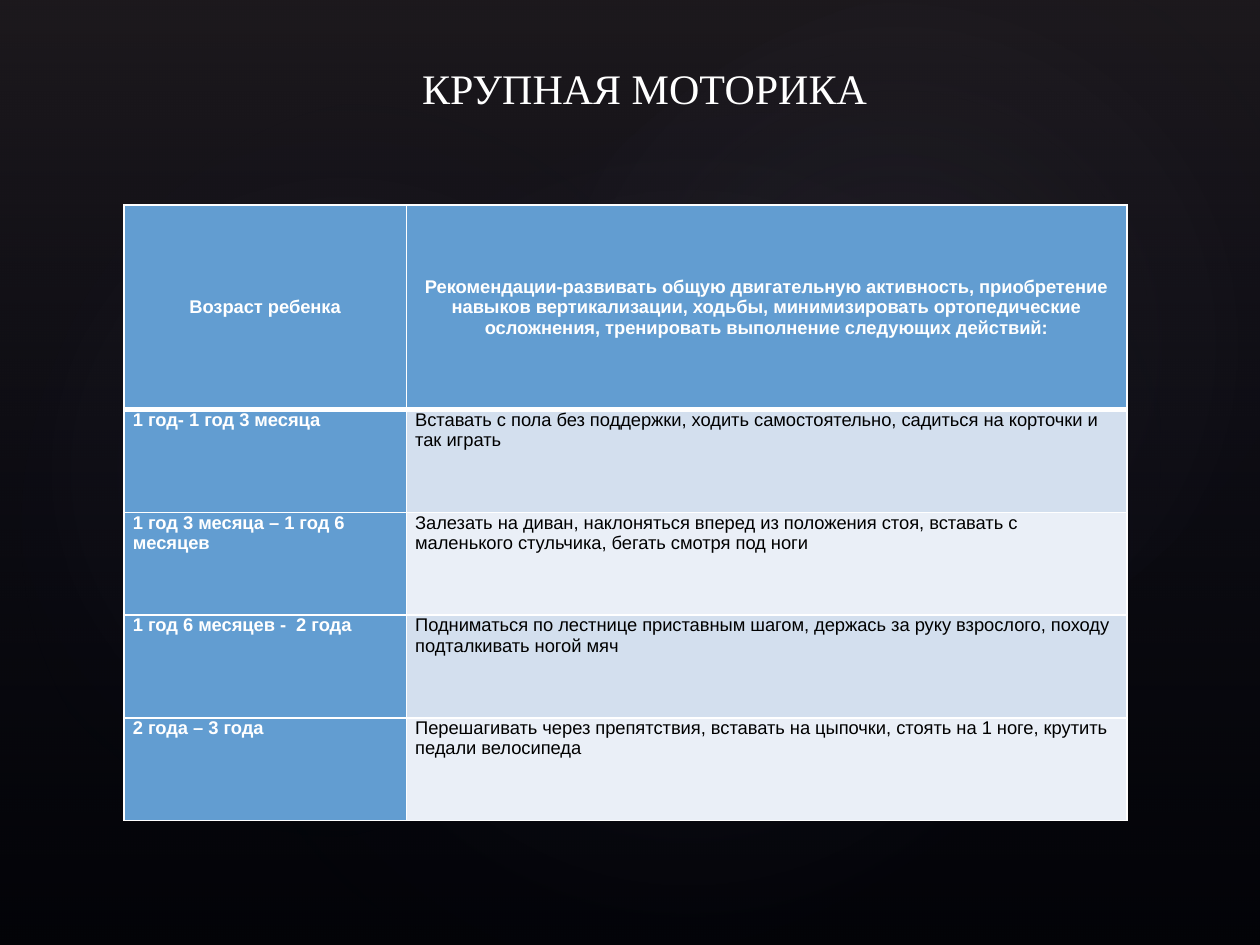
from lxml import etree
from pptx import Presentation
from pptx.dml.color import RGBColor
from pptx.enum.shapes import MSO_SHAPE as Shape
from pptx.enum.text import MSO_ANCHOR as Anchor, PP_ALIGN as Align
from pptx.oxml import parse_xml
from pptx.oxml.ns import nsdecls, qn
from pptx.util import Cm, Pt

BLACK = RGBColor(0x00, 0x00, 0x00)
WHITE = RGBColor(0xFF, 0xFF, 0xFF)
BLUE = RGBColor(0x62, 0x9D, 0xD1)
BANDS = [RGBColor(0xD3, 0xDF, 0xEE), RGBColor(0xEA, 0xEF, 0xF7)]
PLUM = RGBColor(0x50, 0x46, 0x52)
NAVY = RGBColor(0x24, 0x28, 0x52)
MIST = RGBColor(0xC4, 0xBC, 0xC6)


def add_glow(kind, box, rotation, stops, direction):
    """Add a borderless shape with a gradient of (position %, colour, opacity %) stops."""
    shape = slide.shapes.add_shape(kind, *(Cm(value) for value in box))
    shape.rotation = rotation
    shape.shadow.inherit = False
    shape.line.fill.background()
    stop_xml = "".join(
        f'<a:gs pos="{position * 1000}"><a:srgbClr val="{color}">'
        f'<a:alpha val="{opacity * 1000}"/></a:srgbClr></a:gs>'
        for position, color, opacity in stops)
    gradient = parse_xml(f'<a:gradFill {nsdecls("a")} rotWithShape="1">'
                         f'<a:gsLst>{stop_xml}</a:gsLst>{direction}</a:gradFill>')
    shape._element.spPr.find(qn("a:prstGeom")).addnext(gradient)


def add_borders(cell, widths):
    properties = cell._tc.get_or_add_tcPr()
    for side, width in widths.items():
        line = etree.SubElement(properties, qn(f"a:ln{side}"), w=str(Pt(width)))
        fill = etree.SubElement(line, qn("a:solidFill"))
        etree.SubElement(fill, qn("a:srgbClr"), val=str(WHITE))


presentation = Presentation()
presentation.slide_width, presentation.slide_height = Cm(25.4), Cm(19.05)
slide = presentation.slides.add_slide(presentation.slide_layouts[6])
slide.background.fill.solid()
slide.background.fill.fore_color.rgb = BLACK

# Backdrop: a vertical fade and three soft lights
add_glow(Shape.RECTANGLE, (0, 0, 25.4, 19.05), 0,
         [(0, PLUM, 36), (100, NAVY, 10)], '<a:lin ang="5400000" scaled="0"/>')
CIRCULAR = ('<a:path path="circle">'
            '<a:fillToRect l="50000" t="50000" r="50000" b="50000"/></a:path>')
for box, rotation, opacity in [
    ((3.81, 2.9, 20.12, 15.85), 328.7, 7),
    ((-0.76, 3.25, 15.39, 12.45), 294.3, 8),
    ((9.09, 0.33, 18.01, 13.21), 328.7, 8),
]:
    add_glow(Shape.OVAL, box, rotation,
             [(0, MIST, opacity), (58, NAVY, 0)], CIRCULAR)

# Title
title = slide.shapes.add_textbox(Cm(5.1), Cm(1.14), Cm(16), Cm(2.06))
title.text_frame.word_wrap = True
paragraph = title.text_frame.paragraphs[0]
paragraph.alignment = Align.CENTER
run = paragraph.add_run()
run.text = "КРУПНАЯ МОТОРИКА "
for name, value in {"name": "Times New Roman", "size": Pt(24)}.items():
    setattr(run.font, name, value)
run.font.color.rgb = WHITE

# Table of recommendations by age
ROWS = [
    ("Возраст ребенка",
     "Рекомендации-развивать общую двигательную активность, приобретение навыков "
     "вертикализации, ходьбы, минимизировать ортопедические осложнения, "
     "тренировать выполнение следующих действий:"),
    ("1 год- 1 год 3 месяца",
     "Вставать с пола без поддержки, ходить самостоятельно, "
     "садиться на корточки и так играть"),
    ("1 год 3 месяца – 1 год 6 месяцев",
     "Залезать на диван, наклоняться вперед из положения стоя, "
     "вставать с маленького стульчика, бегать смотря под ноги"),
    ("1 год 6 месяцев -  2 года",
     "Подниматься по лестнице приставным шагом, держась за руку взрослого, "
     "походу подталкивать ногой мяч"),
    ("2 года – 3 года",
     "Перешагивать через препятствия, вставать на цыпочки, "
     "стоять на 1 ноге, крутить педали велосипеда"),
]
CELL_MARGINS = {"margin_left": Cm(0.18), "margin_right": Cm(0.18),
                "margin_top": 0, "margin_bottom": 0}
table = slide.shapes.add_table(len(ROWS), 2, Cm(2.5), Cm(4.13),
                               Cm(20.22), Cm(12.4)).table
for column, width in zip(table.columns, (5.69, 14.53)):
    column.width = Cm(width)

for row_index, texts in enumerate(ROWS):
    is_header = row_index == 0
    table.rows[row_index].height = Cm(4.13 if is_header else 2.07)
    for column_index, text in enumerate(texts):
        cell = table.cell(row_index, column_index)
        is_heading = is_header or column_index == 0
        for name, value in CELL_MARGINS.items():
            setattr(cell, name, value)
        cell.vertical_anchor = Anchor.MIDDLE if is_header else Anchor.TOP
        add_borders(cell, {"L": 1, "R": 1, "T": 3 if row_index == 1 else 1,
                           "B": 3 if is_header else 1})
        cell.fill.solid()
        cell.fill.fore_color.rgb = BLUE if is_heading else BANDS[(row_index - 1) % 2]
        paragraph = cell.text_frame.paragraphs[0]
        paragraph.alignment = Align.CENTER if is_header else Align.LEFT
        run = paragraph.add_run()
        run.text = text
        for name, value in {"name": "Arial", "size": Pt(10.5),
                            "bold": is_heading}.items():
            setattr(run.font, name, value)
        run.font.color.rgb = WHITE if is_heading else BLACK

presentation.save("out.pptx")
